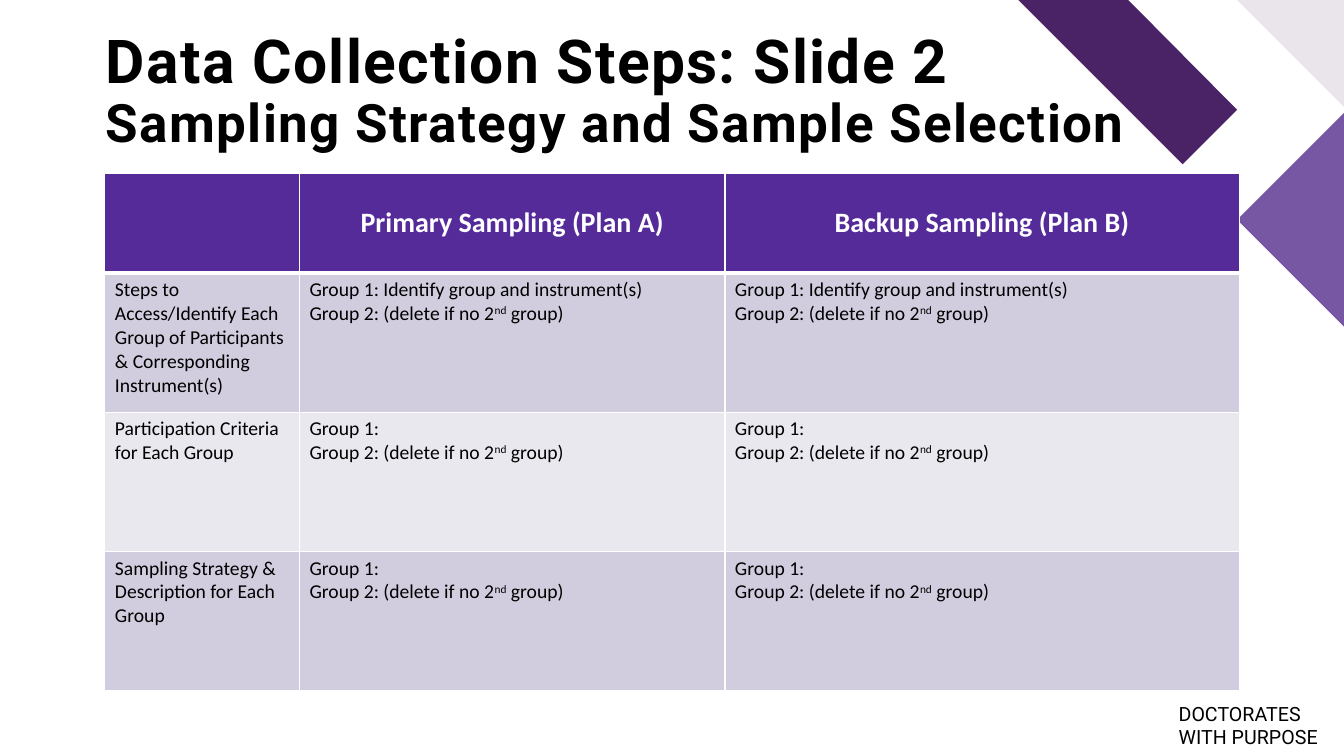
from lxml import etree
from pptx import Presentation
from pptx.dml.color import RGBColor
from pptx.enum.text import MSO_ANCHOR, PP_ALIGN
from pptx.oxml.ns import qn
from pptx.util import Inches, Pt

BOTTOM, MIDDLE, TOP = MSO_ANCHOR.BOTTOM, MSO_ANCHOR.MIDDLE, MSO_ANCHOR.TOP
CENTER, LEFT = PP_ALIGN.CENTER, PP_ALIGN.LEFT


def rgb(hex_color):
    return RGBColor.from_string(hex_color)


def add_plain_textbox(left, top, width, height, text):
    """Add a wrapping text box without insets and return its text frame."""
    box = slide.shapes.add_textbox(Inches(left), Inches(top), Inches(width), Inches(height))
    frame = box.text_frame
    frame.word_wrap = True
    frame.margin_left = frame.margin_right = frame.margin_top = frame.margin_bottom = 0
    frame.text = text
    for run in frame.paragraphs[0].runs:
        run.font.name = "Roboto"
        run.font.color.rgb = rgb("000000")
    return frame


prs = Presentation()
prs.slide_width, prs.slide_height = Inches(13.33), Inches(7.5)
slide = prs.slides.add_slide(prs.slide_layouts[6])

# Corner decoration
corner_shapes = [
    ("492366", [(10.1, 0), (11.19, 0), (12.27, 1.09), (11.73, 1.63)]),
    ("EAE5EB", [(12.27, 0), (13.33, 0), (13.33, 1.06)]),
    ("7757A4", [(13.33, 3.24), (12.27, 2.18), (13.33, 1.12)]),
]
for color, points in corner_shapes:
    corners = [(Inches(x), Inches(y)) for x, y in points]
    builder = slide.shapes.build_freeform(*corners[0])
    builder.add_line_segments(corners[1:], close=True)
    decoration = builder.convert_to_shape()
    decoration.shadow.inherit = False
    decoration.fill.solid()
    decoration.fill.fore_color.rgb = rgb(color)
    decoration.line.fill.background()

# Title
title = add_plain_textbox(
    1.05, 0.86, 10.64, 0.67,
    "Data Collection Steps: Slide 2\vSampling Strategy and Sample Selection",
)
title.vertical_anchor = BOTTOM
title.paragraphs[0].line_spacing = 0.9
for run, size in zip(title.paragraphs[0].runs, (43.2, 37.8)):
    run.font.size = Pt(size)
    run.font.bold = True
    run.font._element.set("spc", "100")

# Sampling table
group_2 = "Group 2: (delete if no 2^nd^ group)"  # carets enclose superscript
instruments = ["Group 1: Identify group and instrument(s)", group_2]
groups = ["Group 1:", group_2]
sampling_rows = [
    [[""], ["Primary Sampling (Plan A)"], ["Backup Sampling (Plan B)"]],
    [["Steps to Access/Identify Each Group of Participants & Corresponding Instrument(s)"],
     instruments, instruments],
    [["Participation Criteria for Each Group"], groups, groups],
    [["Sampling Strategy & Description for Each Group"], groups, groups],
]
column_widths = [1.93, 4.22, 5.1]
row_heights = [0.99, 1.38, 1.38, 1.38]
row_fills = ["552B9A", "D1CDDE", "E9E8EF", "D1CDDE"]

table = slide.shapes.add_table(
    len(row_heights), len(column_widths), Inches(1.04), Inches(1.72),
    Inches(sum(column_widths)), Inches(sum(row_heights)),
).table
for column, width in zip(table.columns, column_widths):
    column.width = Inches(width)

for row_index, row_texts in enumerate(sampling_rows):
    is_header = row_index == 0
    table.rows[row_index].height = Inches(row_heights[row_index])
    border_widths = {
        "a:lnL": 1,
        "a:lnR": 1,
        "a:lnT": 3 if row_index == 1 else 1,
        "a:lnB": 3 if is_header else 1,
    }
    for column_index, lines in enumerate(row_texts):
        cell = table.cell(row_index, column_index)
        cell_properties = cell._tc.get_or_add_tcPr()
        for side, width in border_widths.items():
            border = etree.SubElement(cell_properties, qn(side), w=str(Pt(width)))
            border_fill = etree.SubElement(border, qn("a:solidFill"))
            etree.SubElement(border_fill, qn("a:srgbClr"), val="FFFFFF")
        cell.fill.solid()
        cell.fill.fore_color.rgb = rgb(row_fills[row_index])
        cell.vertical_anchor = MIDDLE if is_header else TOP

        cell.text_frame.text = "\n".join(lines)
        for paragraph, line in zip(cell.text_frame.paragraphs, lines):
            paragraph.alignment = CENTER if is_header else LEFT
            pieces = line.split("^")
            paragraph.text = pieces[0]
            for piece in pieces[1:]:
                paragraph.add_run().text = piece
            for run_index, run in enumerate(paragraph.runs):
                run.font.name = "Calibri"
                run.font.size = Pt(20 if is_header else 14)
                run.font.bold = is_header
                run.font.color.rgb = rgb("FFFFFF" if is_header else "000000")
                if run_index == 1:
                    run.font._element.set("baseline", "30000")

# Footer
footer = add_plain_textbox(11.69, 6.96, 1.44, 0.37, "DOCTORATES WITH PURPOSE")
footer.paragraphs[0].runs[0].font.size = Pt(14)

prs.save("out.pptx")
